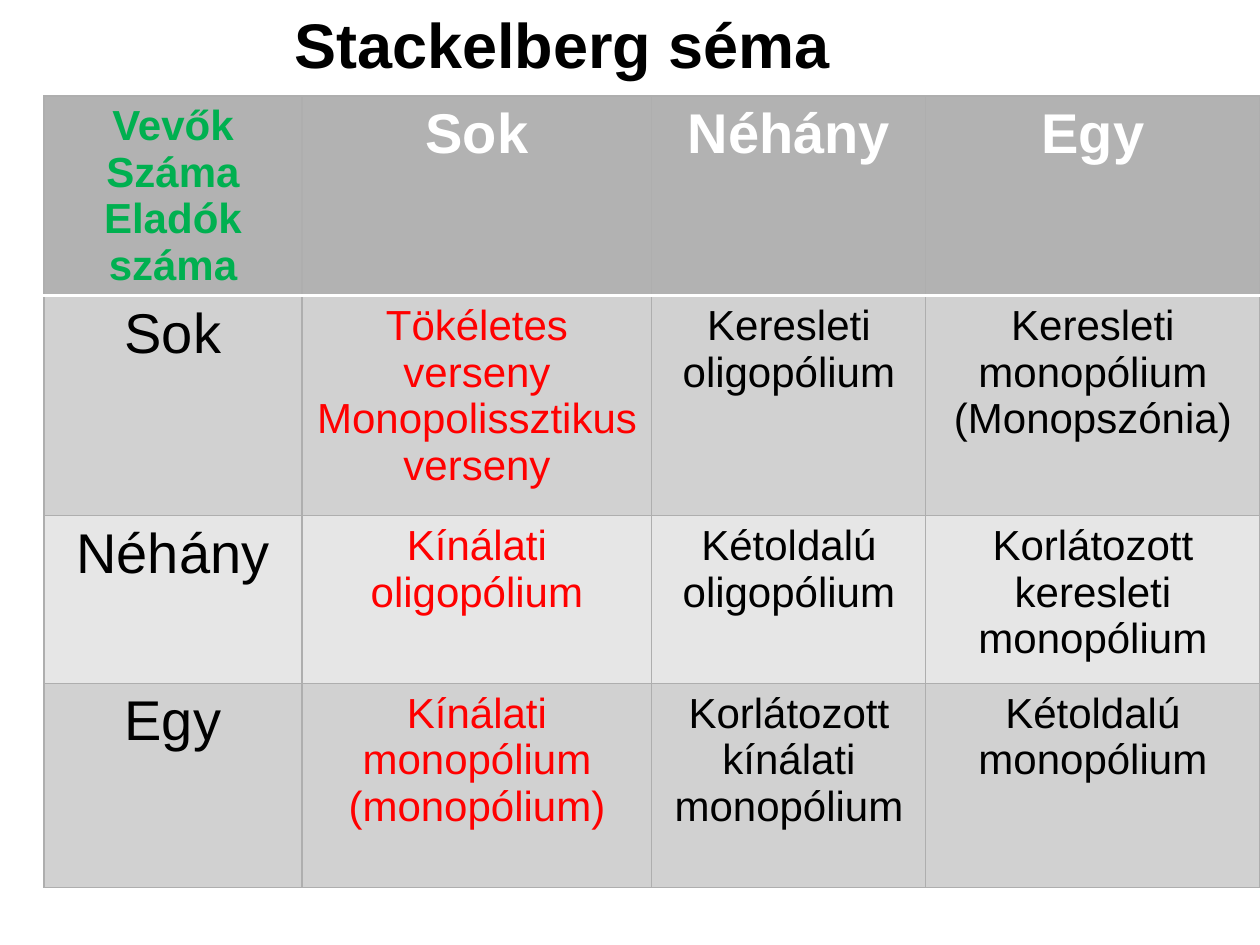
from lxml import etree
from pptx import Presentation, util as u
from pptx.dml.color import RGBColor
from pptx.enum import text
from pptx.oxml.ns import qn

PX = 914400 // 126


def color(target, value):
    target.rgb = RGBColor.from_string(value)


def border(cell, sides, value, width):
    # Border lines come before the fill in the cell properties
    tcPr = cell._tc.get_or_add_tcPr()
    for i, side in enumerate(sides):
        ln = etree.Element(qn("a:ln" + side), w=str(u.Pt(width)))
        fill = etree.SubElement(ln, qn("a:solidFill"))
        etree.SubElement(fill, qn("a:srgbClr"), val=value)
        tcPr.insert(i, ln)


prs = Presentation()
prs.slide_width, prs.slide_height = u.Inches(10), u.Inches(7.5)
s = prs.slides.add_slide(prs.slide_layouts[6])

# Table
rows = [
    ["Vevők\nSzáma\nEladók\nszáma", "Sok", "Néhány", "Egy"],
    ["Sok", "Tökéletes\nverseny\nMonopolissztikus verseny",
     "Keresleti oligopólium", "Keresleti monopólium\n(Monopszónia)"],
    ["Néhány", "Kínálati oligopólium", "Kétoldalú oligopólium",
     "Korlátozott keresleti monopólium"],
    ["Egy", "Kínálati monopólium\n(monopólium)",
     "Korlátozott kínálati monopólium", "Kétoldalú monopólium"],
]
widths = [258, 350, 274, 334]
heights = [199, 220, 168, 204]
fills = ["B2B2B2", "D1D1D1", "E6E6E6", "D1D1D1"]

table = s.shapes.add_table(4, 4, 44 * PX, 96 * PX,
                           sum(widths) * PX, sum(heights) * PX).table
for col, width in zip(table.columns, widths):
    col.width = width * PX
for row, height in zip(table.rows, heights):
    row.height = height * PX

for i, labels in enumerate(rows):
    for j, label in enumerate(labels):
        cell = table.cell(i, j)
        cell.fill.solid()
        color(cell.fill.fore_color, fills[i])

        # White rule under the header row, thin grey lines elsewhere
        rule, grey = {0: ("B", "LRT"), 1: ("T", "LRB")}.get(i, ("", "LRTB"))
        for side in "BTRL":
            if side in rule:
                border(cell, side, "FFFFFF", 2)
            else:
                border(cell, side, "AEAEAE", 0.75)

        # Headings are large, the corner and the market forms smaller
        heading = (i == 0) != (j == 0)
        if i == 0:
            ink = "FFFFFF" if j else "00B050"
        else:
            ink = "FF0000" if j == 1 else "000000"
        cell.text_frame.text = label
        for p in cell.text_frame.paragraphs:
            p.alignment = text.PP_ALIGN.CENTER
            p.font.name = "Arial"
            p.font.size = u.Pt(32 if heading else 24)
            p.font.bold = i == 0
            color(p.font.color, ink)

# Title
tf = s.shapes.add_textbox(282 * PX, -1 * PX, 566 * PX, 89 * PX).text_frame
tf.word_wrap = False
tf.auto_size = text.MSO_AUTO_SIZE.SHAPE_TO_FIT_TEXT
p = tf.paragraphs[0]
p.text = "Stackelberg séma"
p.font.name = "Arial"
p.font.size = u.Pt(36)
p.font.bold = True
color(p.font.color, "000000")

prs.save("out.pptx")
